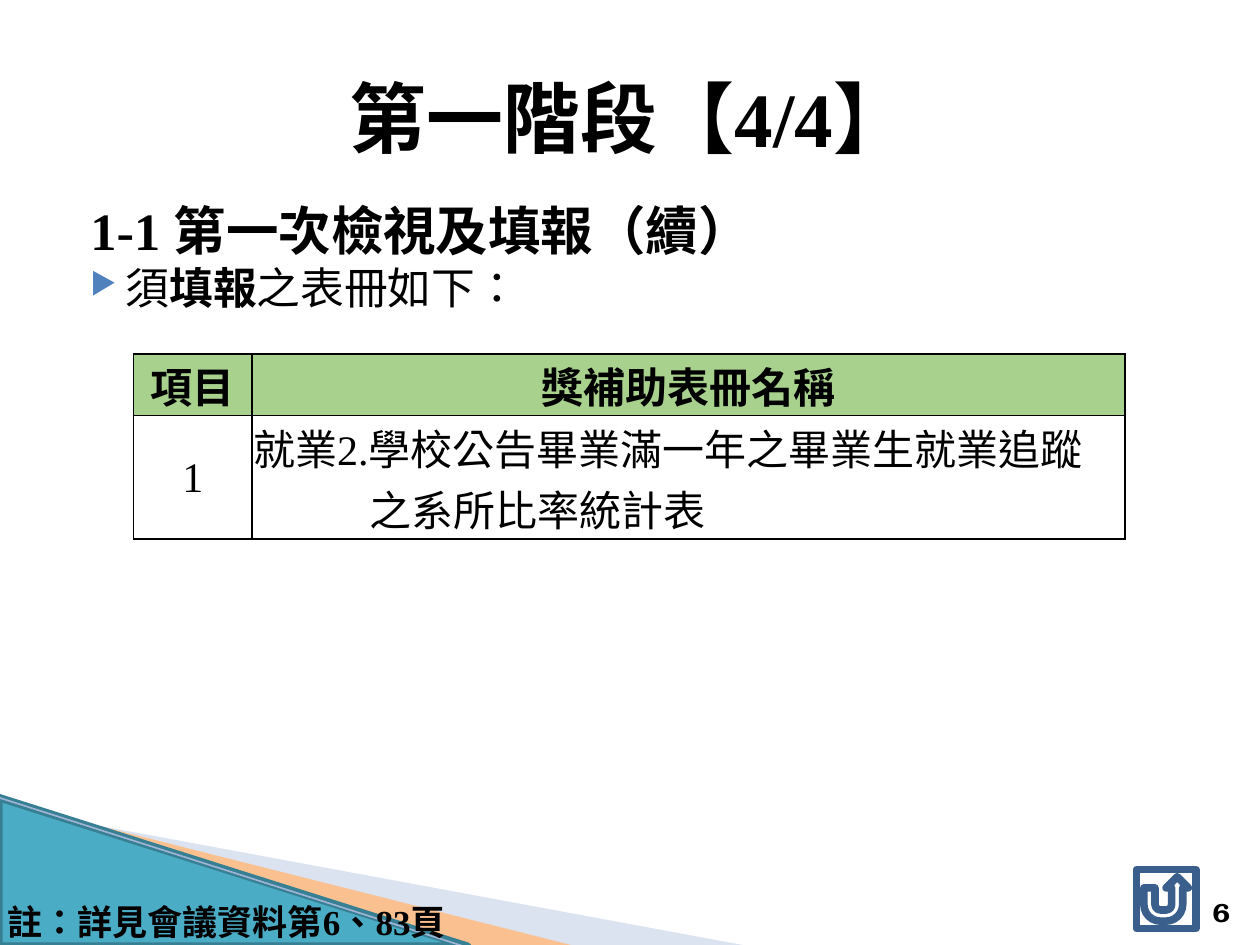
import pptx
import pptx.util
import pptx.dml.color
import pptx.enum.shapes
import pptx.enum.text
import pptx.oxml
import pptx.oxml.ns
import lxml.etree

Inches = pptx.util.Inches
Pt = pptx.util.Pt
SHAPE = pptx.enum.shapes.MSO_SHAPE
ALIGN = pptx.enum.text.PP_ALIGN
ANCHOR = pptx.enum.text.MSO_ANCHOR
qn = pptx.oxml.ns.qn
SERIF = "Times New Roman"


def paint(color, value):
    color.rgb = pptx.dml.color.RGBColor.from_string(value)


def write(para, text, size, bold=True, face=SERIF):
    run = para.add_run()
    run.text = text
    run.font.size = Pt(size)
    run.font.bold = bold
    run.font.name = face
    paint(run.font.color, "000000")
    run.font._element.set("lang", "zh-TW")


deck = pptx.Presentation()
deck.slide_width, deck.slide_height = Inches(10), Inches(7.5)
slide = deck.slides.add_slide(deck.slide_layouts[6])
shapes = slide.shapes

# Corner wedges: points, fill, opacity in percent
wedges = [
    ([(0.55, 6.51), (5.95, 7.51), (4.56, 7.51), (0.55, 6.5)], "A7B9DB", 40),
    ([(0.53, 6.49), (4.57, 7.51), (3.72, 7.52), (0.54, 6.5)], "FAC090", 100),
]
for points, fill, alpha in wedges:
    spots = [(Inches(x), Inches(y)) for x, y in points]
    form = shapes.build_freeform(*spots[0])
    form.add_line_segments(spots[1:], close=True)
    wedge = form.convert_to_shape()
    wedge.shadow.inherit = False
    wedge.fill.solid()
    paint(wedge.fill.fore_color, fill)
    wedge.line.fill.background()
    if alpha < 100:
        tint = wedge._element.spPr.find(".//" + qn("a:srgbClr"))
        lxml.etree.SubElement(tint, qn("a:alpha")).set("val", str(alpha * 1000))

# Teal corner and its edge line
corner = shapes.add_shape(SHAPE.RIGHT_TRIANGLE, Inches(-0.01), Inches(6.33),
                          Inches(3.72), Inches(1.18))
corner.shadow.inherit = False
corner.fill.solid()
paint(corner.fill.fore_color, "4BACC6")
paint(corner.line.color, "377F92")
corner.line.width = Pt(4.33)

edge = shapes.add_connector(pptx.enum.shapes.MSO_CONNECTOR.STRAIGHT, Inches(-0.01),
                            Inches(6.33), Inches(3.71), Inches(7.52))
paint(edge.line.color, "9EB3D6")
edge.line.width = Pt(0.95)
lxml.etree.SubElement(edge._element.spPr, qn("a:effectLst"))

# Text boxes: place, anchor, alignment; the first paragraph of each is kept
boxes = {
    "title": ((0, 0.3, 10, 1.25), ANCHOR.MIDDLE, ALIGN.CENTER),
    "body": ((0.5, 1.62, 9, 1.03), ANCHOR.TOP, ALIGN.LEFT),
    "page": ((9.25, 7.01, 0.61, 0.4), ANCHOR.BOTTOM, ALIGN.RIGHT),
    "note": ((-0.04, 7.1, 5.43, 0.44), ANCHOR.TOP, ALIGN.LEFT),
}
paras = {}
for name, (place, anchor, align) in boxes.items():
    frame = shapes.add_textbox(*map(Inches, place)).text_frame
    frame.word_wrap = True
    frame.vertical_anchor = anchor
    paras[name] = frame.paragraphs[0]
    paras[name].alignment = align
    if name == "body":
        item = frame.add_paragraph()

write(paras["title"], "第一階段【4/4】", 44)
write(paras["page"], "6", 15, face="TeX Gyre Bonum")
write(paras["note"], "註：詳見會議資料第6、83頁", 20)

# Heading and bullet
head = paras["body"]
write(head, "1-1 第一次檢視及填報（續）", 30)
for text, bold in [("須", False), ("填報", True), ("之表冊如下：", False)]:
    write(item, text, 25, bold)
for para, space, left, hang in [(head, 4, 0.12, 0), (item, 6, 0.4, -0.28)]:
    para.line_spacing = 0.8
    para.space_before = Pt(space)
    props = para._p.get_or_add_pPr()
    props.set("marL", str(Inches(left)))
    props.set("indent", str(Inches(hang)))
color = lxml.etree.SubElement(props, qn("a:buClr"))
lxml.etree.SubElement(color, qn("a:srgbClr")).set("val", "4F81BD")
lxml.etree.SubElement(props, qn("a:buSzPct")).set("val", "68000")
lxml.etree.SubElement(props, qn("a:buChar")).set("char", "▶")

# Return button
button = shapes.add_shape(SHAPE.ACTION_BUTTON_RETURN, Inches(9.02), Inches(6.9),
                          Inches(0.47), Inches(0.47))
button.shadow.inherit = False
button.fill.background()
paint(button.line.color, "3A5F8C")
button.line.width = Pt(4.33)

# Table of forms
rows = [
    ("項目", "獎補助表冊名稱"),
    ("1", "就業2.學校公告畢業滿一年之畢業生就業追蹤之系所比率統計表"),
]
table = shapes.add_table(2, 2, Inches(1.06), Inches(2.81),
                         Inches(7.87), Inches(1.47)).table
for col, width in zip(table.columns, (0.94, 6.93)):
    col.width = Inches(width)
for row, height in zip(table.rows, (0.49, 0.98)):
    row.height = Inches(height)
for r, texts in enumerate(rows):
    for c, text in enumerate(texts):
        cell = table.cell(r, c)
        cell.vertical_anchor = ANCHOR.MIDDLE
        cell.margin_left = cell.margin_right = cell.margin_top = Inches(0.01)
        cell.margin_bottom = 0
        para = cell.text_frame.paragraphs[0]
        write(para, text, 24, r == 0)
        if (r, c) == (1, 1):
            props = para._p.get_or_add_pPr()
            props.set("marL", str(Inches(0.92)))
            props.set("indent", str(Inches(-0.92)))
        else:
            para.alignment = ALIGN.CENTER
        # Borders come before the fill in the cell's XML
        tcpr = cell._tc.get_or_add_tcPr()
        for side in ("lnL", "lnR", "lnT", "lnB"):
            line = lxml.etree.SubElement(tcpr, qn("a:" + side))
            line.set("w", str(Pt(1)))
            fill = lxml.etree.SubElement(line, qn("a:solidFill"))
            lxml.etree.SubElement(fill, qn("a:srgbClr")).set("val", "000000")
        if r == 0:
            cell.fill.solid()
            paint(cell.fill.fore_color, "A9D18E")
        else:
            cell.fill.background()

deck.save("out.pptx")
